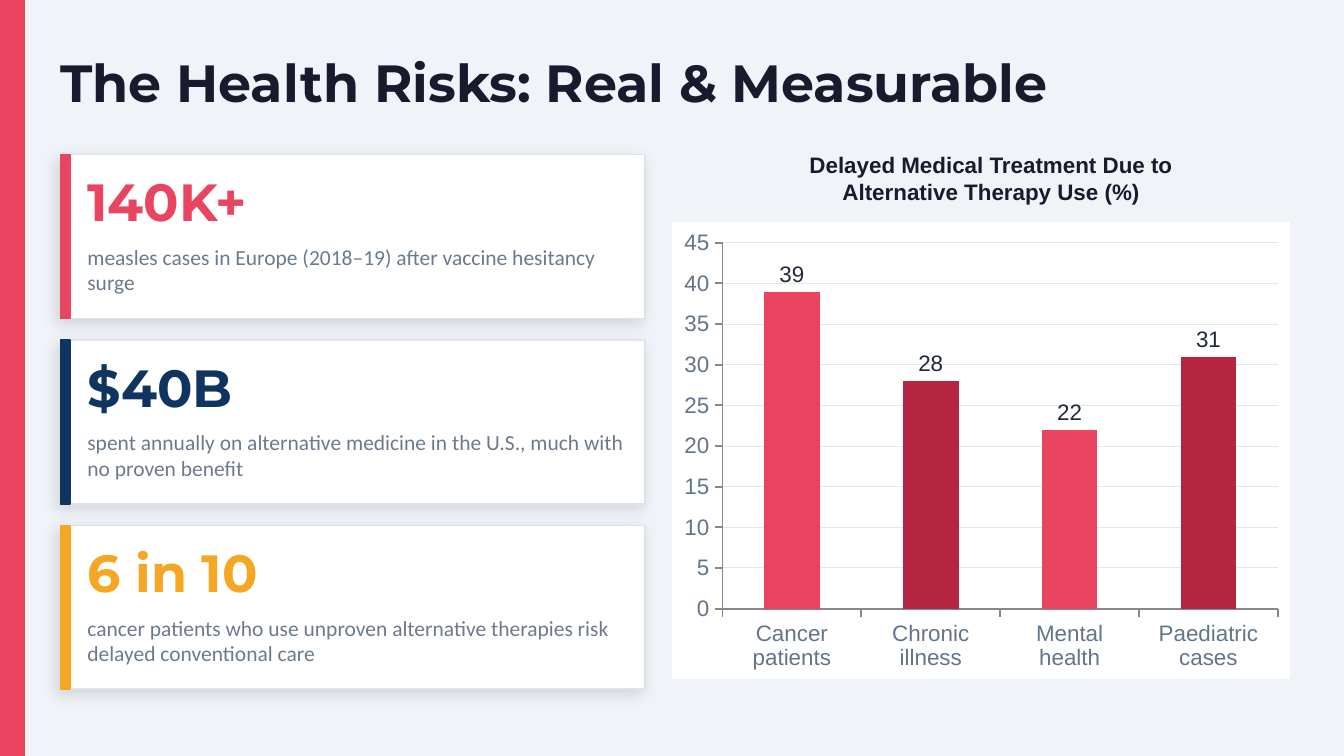
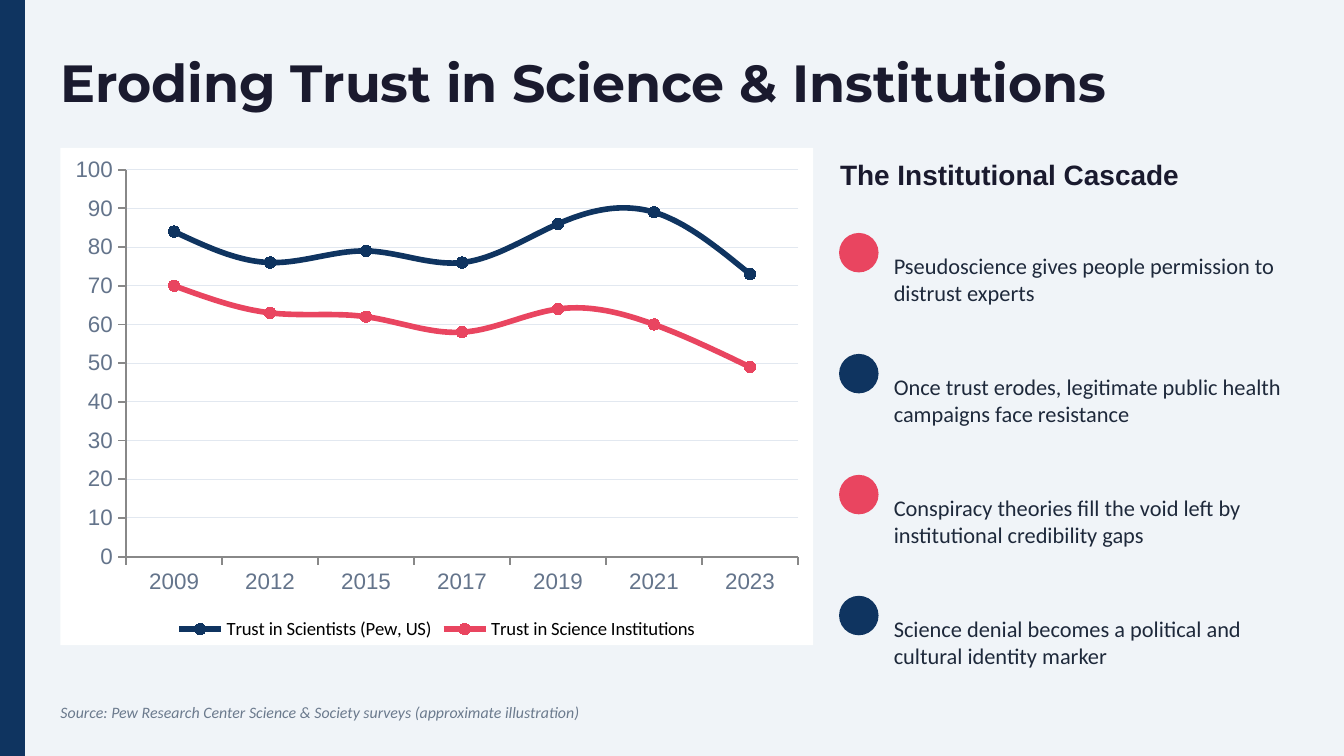
"""Build two slides on the health risks of pseudoscience and the loss of trust in science."""
from dataclasses import dataclass

from lxml import etree
from pptx import Presentation
from pptx.chart.chart import Chart
from pptx.chart.data import CategoryChartData
from pptx.dml.color import RGBColor
from pptx.enum.chart import (
    XL_CHART_TYPE,
    XL_LABEL_POSITION,
    XL_LEGEND_POSITION,
    XL_MARKER_STYLE,
    XL_TICK_LABEL_POSITION,
    XL_TICK_MARK,
)
from pptx.enum.shapes import MSO_SHAPE
from pptx.enum.text import MSO_ANCHOR, PP_ALIGN
from pptx.oxml import parse_xml
from pptx.oxml.ns import nsdecls, qn
from pptx.presentation import Presentation as Deck
from pptx.shapes.autoshape import Shape
from pptx.slide import Slide
from pptx.util import Inches, Pt

COLUMNS = XL_CHART_TYPE.COLUMN_CLUSTERED
LINES = XL_CHART_TYPE.LINE_MARKERS
LABEL_ABOVE = XL_LABEL_POSITION.OUTSIDE_END
LEGEND_BOTTOM = XL_LEGEND_POSITION.BOTTOM
ROUND_MARKER = XL_MARKER_STYLE.CIRCLE
LABELS_LOW = XL_TICK_LABEL_POSITION.LOW
TICK_OUT = XL_TICK_MARK.OUTSIDE
RECTANGLE = MSO_SHAPE.RECTANGLE
OVAL = MSO_SHAPE.OVAL
MIDDLE = MSO_ANCHOR.MIDDLE
LEFT = PP_ALIGN.LEFT
CENTER = PP_ALIGN.CENTER

HEADING_FONT, BODY_FONT, LABEL_FONT = "Montserrat", "Calibri", "Arial"
BACKGROUND, WHITE, BLACK = "F0F4F8", "FFFFFF", "000000"
RED, DARK_RED, NAVY, AMBER = "E94560", "B5253F", "0F3460", "F5A623"
INK, BODY_INK, MUTED = "1A1A2E", "1E293B", "6B7A8D"
CARD_EDGE, AXIS_INK, AXIS_LINE, GRID = "DDE3EC", "64748B", "888888", "E2E8F0"

SLIDE_WIDTH = 10
SLIDE_HEIGHT = SLIDE_WIDTH * 9 / 16
MARGIN = 0.45
CARD_TOP, CARD_WIDTH, CARD_HEIGHT, CARD_STEP = 1.15, 4.35, 1.22, 1.38
STEP_TOP, STEP_PITCH = 1.68, 0.9
CASCADE_LEFT, CASCADE_WIDTH = 6.25, 3.45


@dataclass(frozen=True)
class Box:
    """Place and size in inches."""

    left: float
    top: float
    width: float
    height: float

    def lengths(self) -> tuple[Inches, Inches, Inches, Inches]:
        """Return the four measures as slide lengths."""
        return Inches(self.left), Inches(self.top), Inches(self.width), Inches(self.height)


@dataclass(frozen=True)
class Risk:
    """A headline figure with its explanation."""

    figure: str
    meaning: str
    accent: str


@dataclass(frozen=True)
class CascadeStep:
    """One stage in the loss of institutional trust."""

    statement: str
    accent: str


@dataclass(frozen=True)
class Trend:
    """One line of survey results."""

    name: str
    shares: tuple[int, ...]
    accent: str


RISKS = (
    Risk("140K+", "measles cases in Europe (2018–19) after vaccine hesitancy surge", RED),
    Risk("$40B", "spent annually on alternative medicine in the U.S., much with no proven benefit", NAVY),
    Risk("6 in 10", "cancer patients who use unproven alternative therapies risk delayed conventional care", AMBER),
)
DELAYS = {"Cancer patients": 39, "Chronic illness": 28, "Mental health": 22, "Paediatric cases": 31}
SURVEY_YEARS = ("2009", "2012", "2015", "2017", "2019", "2021", "2023")
TRENDS = (
    Trend("Trust in Scientists (Pew, US)", (84, 76, 79, 76, 86, 89, 73), NAVY),
    Trend("Trust in Science Institutions", (70, 63, 62, 58, 64, 60, 49), RED),
)
CASCADE = (
    CascadeStep("Pseudoscience gives people permission to distrust experts", RED),
    CascadeStep("Once trust erodes, legitimate public health campaigns face resistance", NAVY),
    CascadeStep("Conspiracy theories fill the void left by institutional credibility gaps", RED),
    CascadeStep("Science denial becomes a political and cultural identity marker", NAVY),
)


def rgb(value: str) -> RGBColor:
    """Turn a hex string into a colour."""
    return RGBColor.from_string(value)


def add_text(
    slide: Slide,
    box: Box,
    text: str,
    *,
    size: float,
    font: str = BODY_FONT,
    color: str = MUTED,
    bold: bool = False,
    italic: bool = False,
    align: PP_ALIGN = LEFT,
    inset: tuple[float, float] = (0, 0),
) -> None:
    """Add vertically centred text, one paragraph for each line of the string."""
    frame = slide.shapes.add_textbox(*box.lengths()).text_frame
    frame.word_wrap = True
    frame.vertical_anchor = MIDDLE
    frame.margin_left = frame.margin_right = Inches(inset[0])
    frame.margin_top = frame.margin_bottom = Inches(inset[1])
    frame.text = text
    for paragraph in frame.paragraphs:
        paragraph.alignment = align
        for run in paragraph.runs:
            run.font.name = font
            run.font.size = Pt(size)
            run.font.bold = bold
            run.font.italic = italic
            run.font.color.rgb = rgb(color)


def add_block(slide: Slide, box: Box, fill: str, edge: str | None = None, kind: MSO_SHAPE = RECTANGLE) -> Shape:
    """Add a filled shape with a one-point edge."""
    block = slide.shapes.add_shape(kind, *box.lengths())
    block.shadow.inherit = False
    block.fill.solid()
    block.fill.fore_color.rgb = rgb(fill)
    block.line.color.rgb = rgb(edge or fill)
    block.line.width = Pt(1)
    return block


def cast_shadow(block: Shape) -> None:
    """Give a shape a soft shadow to the lower left."""
    effects = block.element.spPr.find(qn("a:effectLst"))
    shadow = etree.SubElement(
        effects, qn("a:outerShdw"), blurRad=str(Pt(8)), dist=str(Pt(3)), dir=str(135 * 60000), algn="bl", rotWithShape="0"
    )
    tint = etree.SubElement(shadow, qn("a:srgbClr"), val=BLACK)
    etree.SubElement(tint, qn("a:alpha"), val="12000")


def add_page(deck: Deck, title: str, accent: str) -> Slide:
    """Add a slide with the shared background, side band and title."""
    slide = deck.slides.add_slide(deck.slide_layouts[6])
    slide.background.fill.solid()
    slide.background.fill.fore_color.rgb = rgb(BACKGROUND)
    add_block(slide, Box(0, 0, 0.18, SLIDE_HEIGHT), accent)
    add_text(slide, Box(MARGIN, 0.28, 9.2, 0.65), title, size=28, font=HEADING_FONT, color=INK, bold=True)
    return slide


def add_plot(slide: Slide, box: Box, kind: XL_CHART_TYPE, data: CategoryChartData, top: int, unit: int) -> Chart:
    """Add a chart on white with the shared axis style."""
    chart = slide.shapes.add_chart(kind, *box.lengths(), data).chart
    chart.has_title = False
    chart.has_legend = False
    chart.font.name = BODY_FONT
    chart.font.size = Pt(10)
    chart.font.color.rgb = rgb(BLACK)
    panel = parse_xml(
        f'<c:spPr {nsdecls("c", "a")}><a:solidFill><a:srgbClr val="{WHITE}"/></a:solidFill>'
        "<a:ln><a:noFill/></a:ln></c:spPr>"
    )
    chart.element.find(qn("c:chart")).addnext(panel)
    for axis in (chart.category_axis, chart.value_axis):
        axis.major_tick_mark = TICK_OUT
        axis.tick_labels.font.name = LABEL_FONT
        axis.tick_labels.font.size = Pt(12)
        axis.tick_labels.font.color.rgb = rgb(AXIS_INK)
        axis.format.line.color.rgb = rgb(AXIS_LINE)
        axis.format.line.width = Pt(1)
    chart.category_axis.tick_label_position = LABELS_LOW
    chart.value_axis.minimum_scale = 0
    chart.value_axis.maximum_scale = top
    chart.value_axis.major_unit = unit
    gridline = chart.value_axis.major_gridlines.format.line
    gridline.color.rgb = rgb(GRID)
    gridline.width = Pt(0.5)
    return chart


def add_risk_card(slide: Slide, risk: Risk, top: float) -> None:
    """Draw one figure card with its accent edge."""
    cast_shadow(add_block(slide, Box(MARGIN, top, CARD_WIDTH, CARD_HEIGHT), WHITE, CARD_EDGE))
    add_block(slide, Box(MARGIN, top, 0.07, CARD_HEIGHT), risk.accent)
    add_text(
        slide, Box(0.65, top + 0.12, 4.08, 0.45), risk.figure, size=28, font=HEADING_FONT, color=risk.accent, bold=True
    )
    add_text(slide, Box(0.65, top + 0.58, 4.08, 0.55), risk.meaning, size=11.5)


def add_cascade_step(slide: Slide, step: CascadeStep, top: float) -> None:
    """Draw one dot and its statement."""
    add_block(slide, Box(CASCADE_LEFT, top + 0.06, 0.28, 0.28), step.accent, kind=OVAL)
    add_text(slide, Box(CASCADE_LEFT + 0.4, top, 3.05, 0.8), step.statement, size=12, color=BODY_INK)


def add_delay_chart(slide: Slide) -> None:
    """Draw the columns of delayed treatment in alternating reds."""
    data = CategoryChartData()
    data.categories = list(DELAYS)
    data.add_series("Series 1", list(DELAYS.values()))
    chart = add_plot(slide, Box(5, 1.65, 4.6, 3.4), COLUMNS, data, 45, 5)
    plot = chart.plots[0]
    plot.gap_width = 150
    plot.vary_by_categories = False
    delays = plot.series[0]
    delays.invert_if_negative = False
    delays.format.fill.solid()
    delays.format.fill.fore_color.rgb = rgb(RED)
    for index in range(1, len(DELAYS), 2):
        column = delays.points[index].format.fill
        column.solid()
        column.fore_color.rgb = rgb(DARK_RED)
    labels = delays.data_labels
    labels.show_value = True
    labels.number_format = "#,##0"
    labels.number_format_is_linked = False
    labels.position = LABEL_ABOVE
    labels.font.name = LABEL_FONT
    labels.font.size = Pt(12)
    labels.font.color.rgb = rgb(BODY_INK)


def add_trust_chart(slide: Slide) -> None:
    """Draw the survey trends as smooth lines with a legend."""
    data = CategoryChartData()
    data.categories = SURVEY_YEARS
    for trend in TRENDS:
        data.add_series(trend.name, trend.shares)
    chart = add_plot(slide, Box(MARGIN, 1.1, 5.6, 3.7), LINES, data, 100, 10)
    chart.plots[0].vary_by_categories = False
    chart.has_legend = True
    chart.legend.position = LEGEND_BOTTOM
    chart.legend.include_in_layout = False
    chart.legend.font.size = Pt(10)
    for trend, line in zip(TRENDS, chart.plots[0].series):
        line.smooth = True
        line.format.line.color.rgb = rgb(trend.accent)
        line.format.line.width = Pt(3)
        line.marker.style = ROUND_MARKER
        line.marker.size = 6
        line.marker.format.fill.solid()
        line.marker.format.fill.fore_color.rgb = rgb(trend.accent)
        line.marker.format.line.color.rgb = rgb(trend.accent)


def build_risks(deck: Deck) -> None:
    """Build the slide on health risks."""
    slide = add_page(deck, "The Health Risks: Real & Measurable", RED)
    for index, risk in enumerate(RISKS):
        add_risk_card(slide, risk, CARD_TOP + index * CARD_STEP)
    heading = "Delayed Medical Treatment Due to\nAlternative Therapy Use (%)"
    add_text(
        slide, Box(5.1, 1, 4.55, 0.65), heading,
        size=12, font=LABEL_FONT, color=INK, bold=True, align=CENTER, inset=(0.1, 0.05),
    )
    add_delay_chart(slide)


def build_trust(deck: Deck) -> None:
    """Build the slide on trust in science."""
    slide = add_page(deck, "Eroding Trust in Science & Institutions", NAVY)
    add_trust_chart(slide)
    heading_box = Box(CASCADE_LEFT, 1.1, CASCADE_WIDTH, 0.4)
    add_text(slide, heading_box, "The Institutional Cascade", size=15, font=LABEL_FONT, color=INK, bold=True)
    for index, step in enumerate(CASCADE):
        add_cascade_step(slide, step, STEP_TOP + index * STEP_PITCH)
    source = "Source: Pew Research Center Science & Society surveys (approximate illustration)"
    add_text(slide, Box(MARGIN, 5.15, 5.6, 0.3), source, size=8.5, italic=True)


def main() -> None:
    """Build and save the deck."""
    deck = Presentation()
    deck.slide_width, deck.slide_height = Inches(SLIDE_WIDTH), Inches(SLIDE_HEIGHT)
    build_risks(deck)
    build_trust(deck)
    deck.save("out.pptx")


if __name__ == "__main__":
    main()
